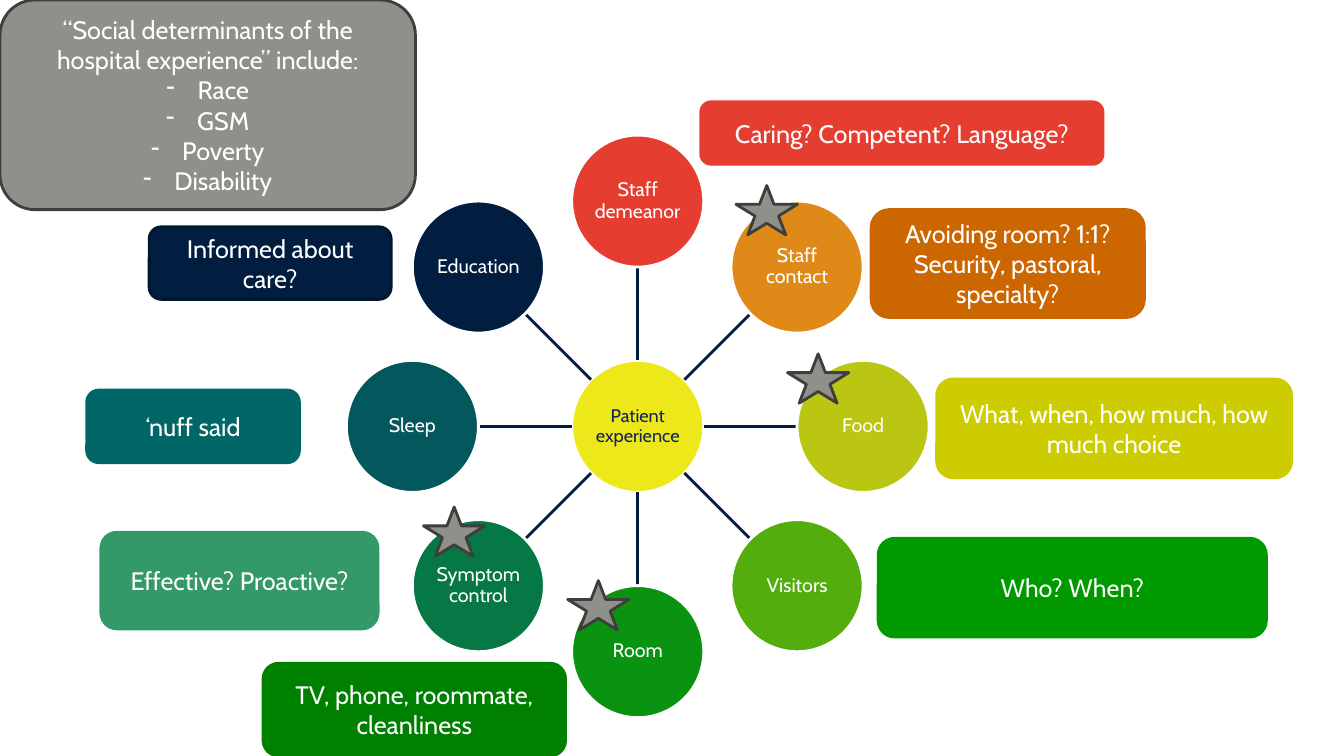
from math import cos, radians, sin

from lxml.etree import SubElement
from pptx import Presentation
from pptx.dml.color import RGBColor
from pptx.enum.shapes import MSO_CONNECTOR, MSO_SHAPE
from pptx.enum.text import MSO_ANCHOR, PP_ALIGN
from pptx.oxml.ns import qn
from pptx.util import Inches, Pt

# Grid of 133.3 columns by 75 rows
CELL = Inches(0.1)
COLUMNS, ROWS = 133.3, 75

# Wheel geometry, in cells
HUB = (63.25, 42.3)
RING = 22.35
DIAMETER = 13.1
NAVY, GREY, DARK_GREY, WHITE = "011E40", "8E9089", "3E3F3C", "FFFFFF"

# Topics clockwise from the top
TOPICS = [
    ("Staff demeanor", "E53E30"),
    ("Staff contact", "DF8A18"),
    ("Food", "BAC612"),
    ("Visitors", "53AD0D"),
    ("Room", "099311"),
    ("Symptom control", "057845"),
    ("Sleep", "03585D"),
    ("Education", NAVY),
]

# Text, (left, top, width, height), fill, outline
QUESTIONS = [
    ("Caring? Competent? Language?", (69.5, 10.1, 39.9, 6.2), "E53E30", "E53E30"),
    ("Avoiding room? 1:1? Security, pastoral, specialty?",
     (86.4, 20.8, 27.1, 10.7), "CC6600", "CC6600"),
    ("What, when, how much, how much choice",
     (92.9, 37.6, 35.2, 9.8), "CCCC00", "CCCC00"),
    ("Who? When?", (87.1, 53.4, 38.5, 9.8), "009900", "009900"),
    ("TV, phone, roommate, cleanliness", (26.1, 65.8, 30, 9.2), "008000", "008000"),
    ("Effective? Proactive?", (10, 52.8, 27.5, 9.6), "339966", "339966"),
    ("‘nuff said", (8.6, 38.7, 21.1, 7.2), "006666", "006666"),
    ("Informed about care?", (14.8, 22.5, 24, 7.2), NAVY, "01162F"),
]
DETERMINANTS = ["Race", "GSM", "Poverty", "Disability"]
STARS = [(42, 50.3), (56.3, 57.6), (78.1, 35.1), (73, 18.4)]


def cells(count):
    return round(count * CELL)


def color(hex_code):
    return RGBColor.from_string(hex_code)


def set_attributes(target, values):
    for name, value in values.items():
        setattr(target, name, value)


def add_figure(slide, kind, box, fill, outline):
    shape = slide.shapes.add_shape(kind, *map(cells, box))
    shape.shadow.inherit = False
    shape.fill.solid()
    shape.fill.fore_color.rgb = color(fill)
    shape.line.color.rgb = color(outline)
    shape.line.width = Pt(2)
    return shape


def add_dash(paragraph):
    properties = paragraph._p.get_or_add_pPr()
    properties.set("marL", str(Inches(0.31)))
    properties.set("indent", str(-Inches(0.31)))
    SubElement(properties, qn("a:buFontTx"))
    SubElement(properties, qn("a:buChar"), char="-")


def write(shape, lines, size, text_color=WHITE, paragraph_format=None):
    """Write centred lines; those after the first are dashed."""
    frame = shape.text_frame
    set_attributes(frame, {"word_wrap": True, "vertical_anchor": MSO_ANCHOR.MIDDLE})
    for index, line in enumerate(lines):
        paragraph = frame.add_paragraph() if index else frame.paragraphs[0]
        set_attributes(paragraph, {"alignment": PP_ALIGN.CENTER, **(paragraph_format or {})})
        if index:
            add_dash(paragraph)
        run = paragraph.add_run()
        run.text = line
        set_attributes(run.font, {"name": "Cabin", "size": Pt(size)})
        run.font.color.rgb = color(text_color)


def add_circle(slide, center, label, fill, size=14, text_color=WHITE):
    left, top = (middle - DIAMETER / 2 for middle in center)
    circle = add_figure(slide, MSO_SHAPE.OVAL, (left, top, DIAMETER, DIAMETER), fill, WHITE)
    for side in ("left", "top", "right", "bottom"):
        setattr(circle.text_frame, f"margin_{side}", Inches(0.01))
    write(circle, [label], size, text_color, {"line_spacing": 0.9, "space_after": Pt(5)})


def point_on_wheel(angle, radius):
    return (HUB[0] + radius * sin(radians(angle)),
            HUB[1] - radius * cos(radians(angle)))


def add_spoke(slide, angle):
    start = point_on_wheel(angle, DIAMETER / 2)
    end = point_on_wheel(angle, RING - DIAMETER / 2)
    spoke = slide.shapes.add_connector(MSO_CONNECTOR.STRAIGHT, *map(cells, start + end))
    spoke.line.color.rgb = color(NAVY)
    spoke.line.width = Pt(2)
    SubElement(spoke._element.spPr, qn("a:effectLst"))


def add_wheel(slide):
    add_circle(slide, HUB, "Patient experience", "ECE819", 13, "152456")
    for index, (label, fill) in enumerate(TOPICS):
        angle = index * 360 / len(TOPICS)
        add_spoke(slide, angle)
        add_circle(slide, point_on_wheel(angle, RING), label, fill)


def add_card(slide, lines, box, fill, outline):
    card = add_figure(slide, MSO_SHAPE.ROUNDED_RECTANGLE, box, fill, outline)
    write(card, lines, 18)


def main():
    presentation = Presentation()
    set_attributes(presentation, {"slide_width": cells(COLUMNS), "slide_height": cells(ROWS)})
    slide = presentation.slides.add_slide(presentation.slide_layouts[6])

    # Wheel of topics
    add_wheel(slide)

    # Questions beside the topics
    for text, box, fill, outline in QUESTIONS:
        add_card(slide, [text], box, fill, outline)

    # Social determinants and the stars that mark them
    heading = "“Social determinants of the hospital experience” include:"
    add_card(slide, [heading, *DETERMINANTS], (0, 0, 41.2, 20.8), GREY, DARK_GREY)
    for left, top in STARS:
        add_figure(slide, MSO_SHAPE.STAR_5_POINT, (left, top, 6.1, 4.9), GREY, DARK_GREY)

    presentation.save("out.pptx")


if __name__ == "__main__":
    main()
